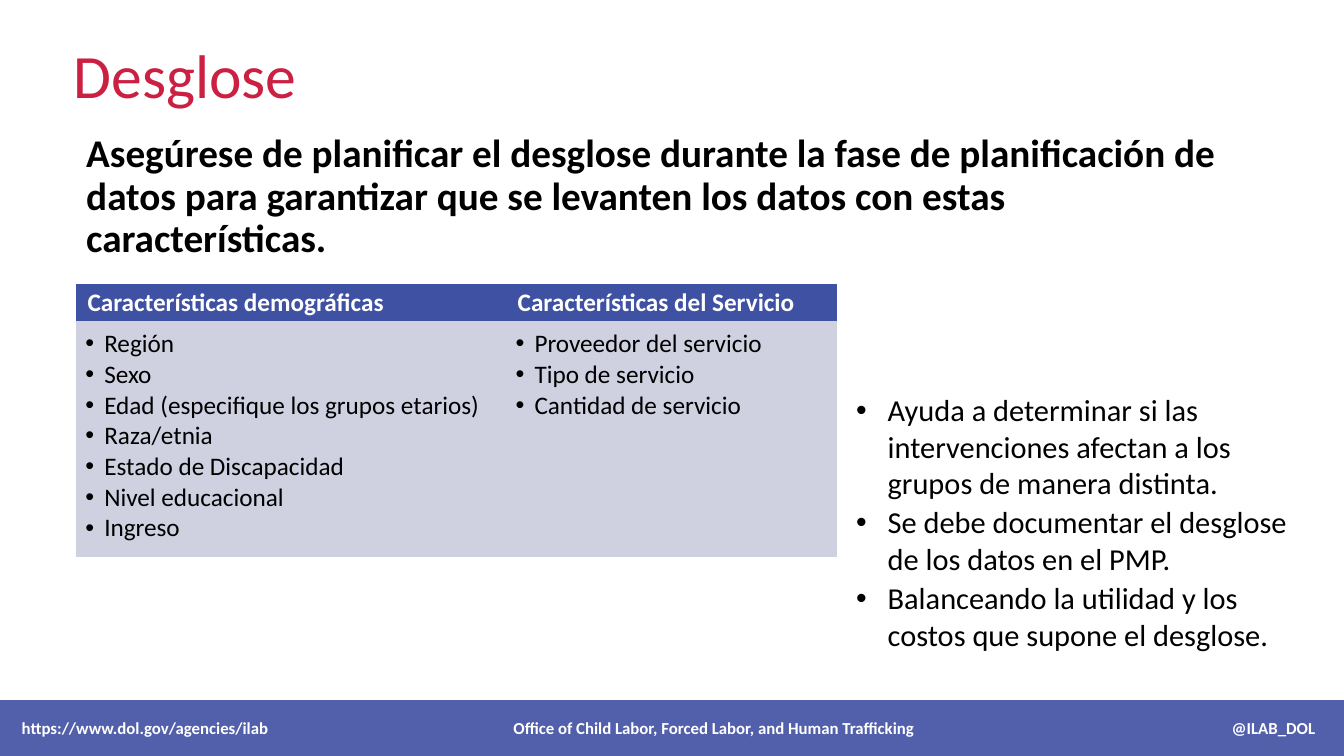
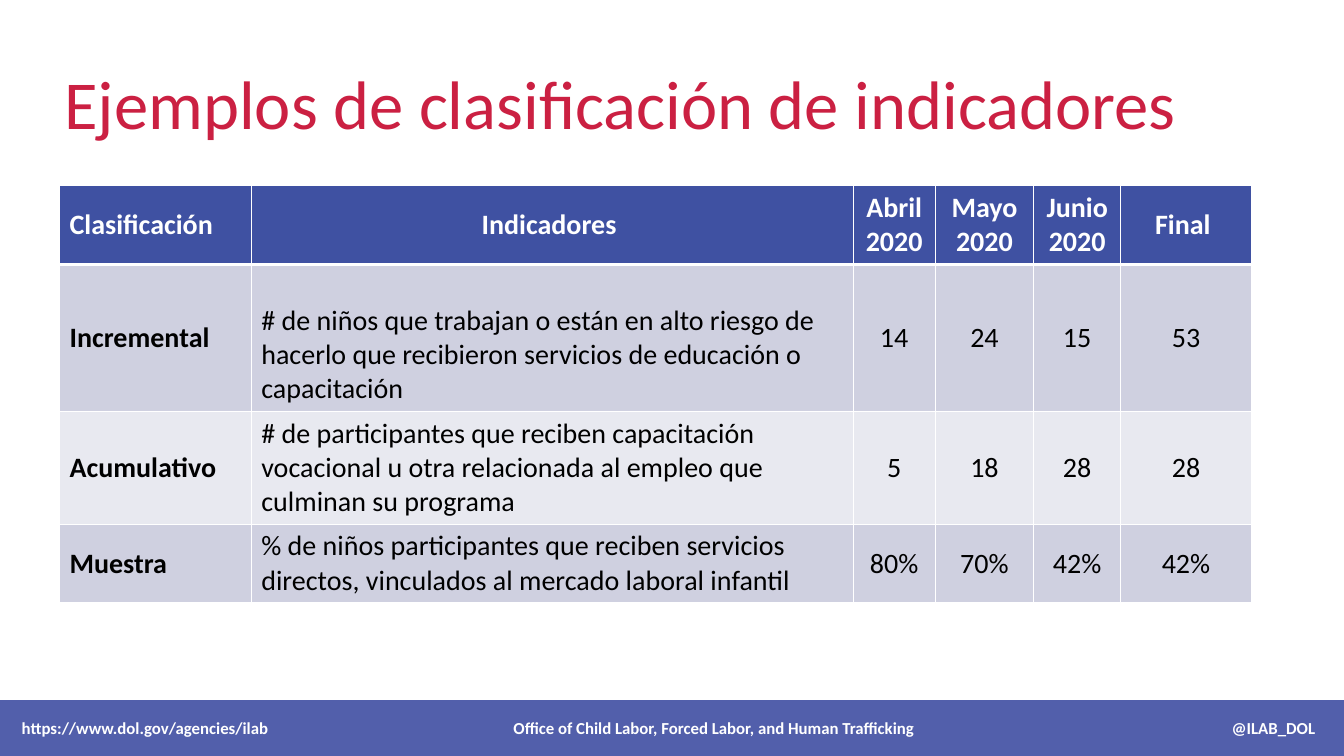
"""Builds two slides on data disaggregation and indicator classification."""
from lxml import etree
from pptx import Presentation
from pptx.dml.color import RGBColor
from pptx.enum import shapes, text
from pptx.oxml import ns
from pptx.util import Pt

COLORS = {
    "title": "CB2042",
    "header": "3F51A2",
    "footer": "525FAB",
    "row": "CFD0E0",
    "row_light": "E8E9F0",
    "text": "000000",
    "white": "FFFFFF",
}
FONT = "Calibri"
LEFT, CENTER, RIGHT = text.PP_ALIGN.LEFT, text.PP_ALIGN.CENTER, text.PP_ALIGN.RIGHT
TOP, MIDDLE, BOTTOM = text.MSO_ANCHOR.TOP, text.MSO_ANCHOR.MIDDLE, text.MSO_ANCHOR.BOTTOM

SLIDE_SIZE = (960, 540)
FOOTER_TOP, FOOTER_HEIGHT = 500, 40
FOOTER_PARTS = [
    ("https://www.dol.gov/agencies/ilab", 15.5, 250, LEFT),
    ("Office of Child Labor, Forced Labor, and Human Trafficking", 335, 350, CENTER),
    ("@ILAB_DOL", 789.5, 150, RIGHT),
]

BREAKDOWN_TITLE = "Desglose"
BREAKDOWN_LEAD = (
    "Asegúrese de planificar el desglose durante la fase de planificación de datos "
    "para garantizar que se levanten los datos con estas características."
)
BREAKDOWN_GROUPS = [
    ("Características demográficas", 307.3, [
        "Región",
        "Sexo",
        "Edad (especifique los grupos etarios)",
        "Raza/etnia",
        "Estado de Discapacidad",
        "Nivel educacional",
        "Ingreso",
    ]),
    ("Características del Servicio", 235.6, [
        "Proveedor del servicio",
        "Tipo de servicio",
        "Cantidad de servicio",
    ]),
]
GROUP_LEFT, GROUP_TOP = 54.5, 203.3
HEADING_HEIGHT, ITEMS_HEIGHT = 26.6, 167.8
BREAKDOWN_NOTES = [
    "Ayuda a determinar si las intervenciones afectan a los grupos de manera distinta.",
    "Se debe documentar el desglose de los datos en el PMP.",
    "Balanceando la utilidad y los costos que supone el desglose.",
]

INDICATOR_TITLE = "Ejemplos de clasificación de indicadores"
INDICATOR_WIDTHS = [137, 430, 58.5, 70.5, 62, 93.5]
INDICATOR_HEIGHTS = [56.5, 105, 80.5, 56]
INDICATOR_ROWS = [
    ["Clasificación", "Indicadores ", "Abril 2020", "Mayo 2020", "Junio 2020", "Final "],
    ["Incremental",
     "# de niños que trabajan o están en alto riesgo de hacerlo que recibieron "
     "servicios de educación o capacitación", "14", "24", "15", "53"],
    ["Acumulativo",
     "# de participantes que reciben capacitación vocacional u otra relacionada "
     "al empleo que culminan su programa", "5", "18", "28", "28"],
    ["Muestra",
     "% de niños participantes que reciben servicios directos, vinculados al "
     "mercado laboral infantil", "80%", "70%", "42%", "42%"],
]


def rgb(name):
    return RGBColor.from_string(COLORS[name])


def write(frame, lines, size, color="text", bold=False, align=LEFT,
          spacing=None, before=0, after=0, indent=0):
    """Fill a text frame with one paragraph per line; an indent adds bullets."""
    frame.word_wrap = True
    frame.text = "\n".join(lines)
    for para in frame.paragraphs:
        para.alignment = align
        para.line_spacing = spacing
        para.space_before, para.space_after = Pt(before), Pt(after)
        if indent:
            props = para._p.get_or_add_pPr()
            props.set("marL", str(Pt(indent)))
            props.set("indent", str(-Pt(indent)))
            font = etree.SubElement(props, ns.qn("a:buFont"))
            font.set("typeface", "Arial")
            bullet = etree.SubElement(props, ns.qn("a:buChar"))
            bullet.set("char", "•")
        for span in para.runs:
            span.font.name = FONT
            span.font.size = Pt(size)
            span.font.bold = bold
            span.font.color.rgb = rgb(color)


def set_margins(frame, left, top, right, bottom):
    frame.margin_left, frame.margin_top = Pt(left), Pt(top)
    frame.margin_right, frame.margin_bottom = Pt(right), Pt(bottom)


def add_text(page, at, lines, size, anchor=TOP, margins=None, fill=None, **style):
    """Add a text box, or a filled rectangle with text when a fill is named."""
    box = add_block(page, at, fill, 1) if fill else page.shapes.add_textbox(*map(Pt, at))
    frame = box.text_frame
    write(frame, lines, size, **style)
    frame.vertical_anchor = anchor
    if margins:
        set_margins(frame, *margins)


def add_block(page, at, color, outline=0):
    block = page.shapes.add_shape(shapes.MSO_SHAPE.RECTANGLE, *map(Pt, at))
    block.shadow.inherit = False
    block.fill.solid()
    block.fill.fore_color.rgb = rgb(color)
    if outline:
        block.line.color.rgb = rgb(color)
        block.line.width = Pt(outline)
    else:
        block.line.fill.background()
    return block


def add_page(deck, title, at, size):
    """Add a blank page with the shared title style and footer band."""
    page = deck.slides.add_slide(deck.slide_layouts[6])
    add_text(page, at, [title], size, BOTTOM, color="title", spacing=0.9)
    add_block(page, (0, FOOTER_TOP, SLIDE_SIZE[0], FOOTER_HEIGHT), "footer")
    for label, left, width, align in FOOTER_PARTS:
        add_text(page, (left, FOOTER_TOP, width, FOOTER_HEIGHT), [label], 12, MIDDLE,
                 (0, 0, 0, 0), color="white", bold=True, align=align)
    return page


def add_grid(page, left, top, widths, heights):
    frame = page.shapes.add_table(len(heights), len(widths), Pt(left), Pt(top),
                                  Pt(sum(widths)), Pt(sum(heights)))
    grid = frame.table
    for column, width in zip(grid.columns, widths):
        column.width = Pt(width)
    for row, height in zip(grid.rows, heights):
        row.height = Pt(height)
    return grid


def set_border(cell, side, width):
    """Draw one white cell border, placed ahead of the cell fill."""
    line = etree.Element(ns.qn(f"a:{side}"), w=str(Pt(width)))
    fill = etree.SubElement(line, ns.qn("a:solidFill"))
    etree.SubElement(fill, ns.qn("a:srgbClr"), val=COLORS["white"])
    cell._tc.get_or_add_tcPr().insert(0, line)


def build_breakdown(deck):
    page = add_page(deck, BREAKDOWN_TITLE, (45.5, 8, 833, 75.5), 44)
    add_text(page, (54.5, 92, 834.5, 106), [BREAKDOWN_LEAD], 28,
             bold=True, spacing=0.9, before=10)
    left = GROUP_LEFT
    for heading, width, items in BREAKDOWN_GROUPS:
        add_text(page, (left, GROUP_TOP, width, HEADING_HEIGHT), [heading], 18, MIDDLE,
                 (8, 3, 8, 3), "header", color="white", bold=True, spacing=0.9)
        add_text(page, (left, GROUP_TOP + HEADING_HEIGHT, width, ITEMS_HEIGHT), items, 18,
                 TOP, (6.5, 6.5, 8.5, 10), "row", spacing=0.9, after=2.5, indent=13.5)
        left += width
    add_text(page, (604.5, 276, 335, 216), BREAKDOWN_NOTES, 21.7, before=2, indent=22.5)


def build_indicators(deck):
    page = add_page(deck, INDICATOR_TITLE, (39, 36, 833, 70.5), 49)
    grid = add_grid(page, 42.5, 132.5, INDICATOR_WIDTHS, INDICATOR_HEIGHTS)
    for r, values in enumerate(INDICATOR_ROWS):
        is_header = r == 0
        fill = "header" if is_header else ("row_light", "row")[r % 2]
        for c, value in enumerate(values):
            is_description = c == 1 and not is_header
            cell = grid.cell(r, c)
            cell.fill.solid()
            cell.fill.fore_color.rgb = rgb(fill)
            cell.vertical_anchor = BOTTOM if is_description else MIDDLE
            write(cell.text_frame, [value], 20,
                  color="white" if is_header else "text",
                  bold=is_header or c == 0,
                  align=LEFT if c == 0 or is_description else CENTER)
            if is_header:
                set_border(cell, "lnB", 3)


def main():
    deck = Presentation()
    deck.slide_width, deck.slide_height = map(Pt, SLIDE_SIZE)
    build_breakdown(deck)
    build_indicators(deck)
    deck.save("out.pptx")


if __name__ == "__main__":
    main()
